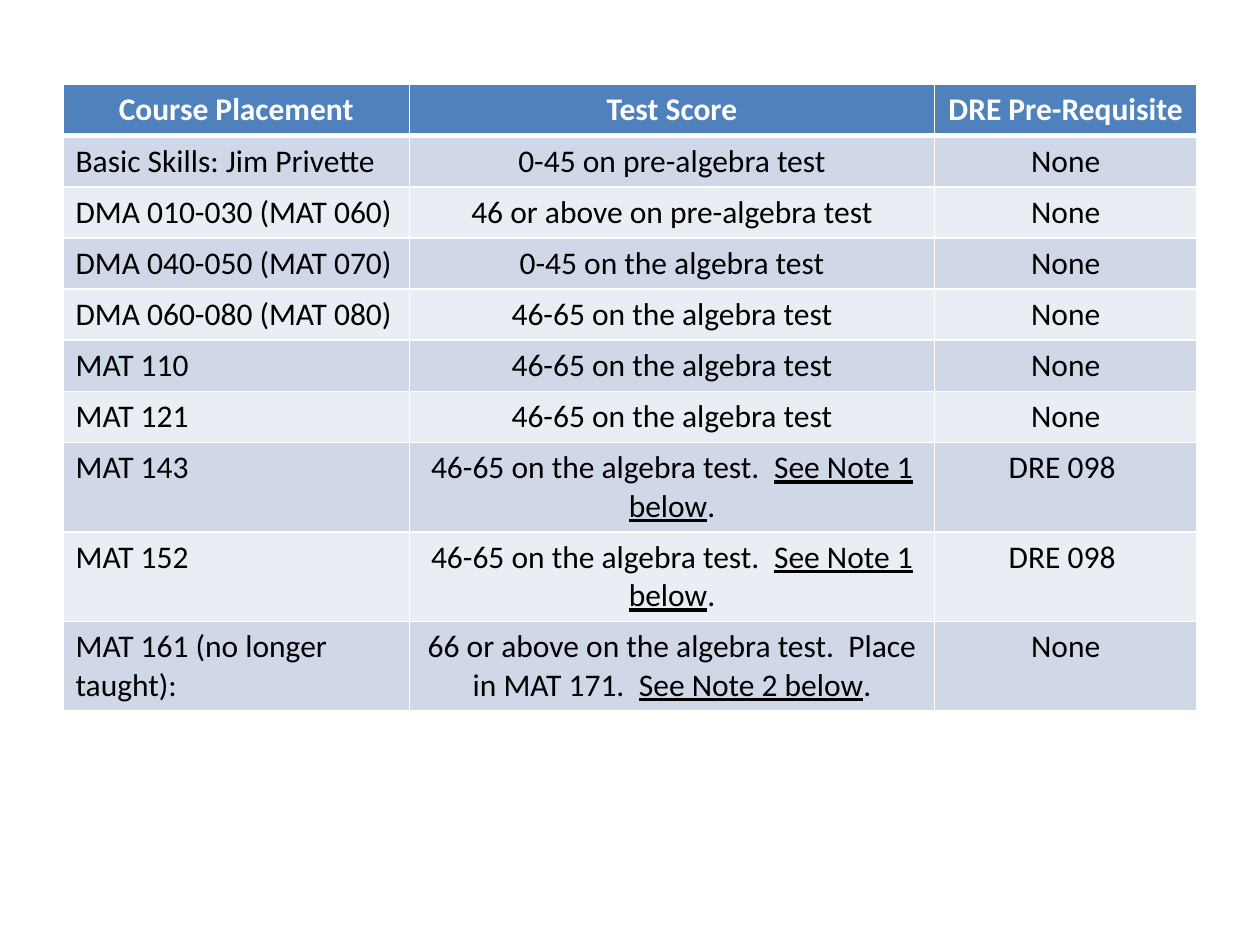
"""Build the math course placement table slide."""
from lxml.etree import SubElement
from pptx import Presentation
from pptx.dml.color import RGBColor
from pptx.enum.text import PP_ALIGN
from pptx.oxml.ns import qn
from pptx.util import Pt

WHITE = RGBColor(0xFF, 0xFF, 0xFF)
BLACK = RGBColor(0x00, 0x00, 0x00)
BLUE = RGBColor(0x4F, 0x81, 0xBD)
BAND_DARK = RGBColor(0xD0, 0xD8, 0xE8)
BAND_LIGHT = RGBColor(0xE9, 0xED, 0xF4)

MID_SCORE = "46-65 on the algebra test"
NOTE_1 = (MID_SCORE + ".  ", "See Note 1 below", ".")
NOTE_2 = ("66 or above on the algebra test.  Place in MAT 171.  ", "See Note 2 below", ".")
ROWS = [
    ("Course Placement", ("Test Score",), "DRE Pre-Requisite"),
    ("Basic Skills: Jim Privette", ("0-45 on pre-algebra test",), "None"),
    ("DMA 010-030 (MAT 060)", ("46 or above on pre-algebra test",), "None"),
    ("DMA 040-050 (MAT 070)", ("0-45 on the algebra test",), "None"),
    ("DMA 060-080 (MAT 080)", (MID_SCORE,), "None"),
    ("MAT 110", (MID_SCORE,), "None"),
    ("MAT 121", (MID_SCORE,), "None"),
    ("MAT 143", NOTE_1, "DRE 098 "),
    ("MAT 152", NOTE_1, "DRE 098 "),
    ("MAT 161 (no longer taught):", NOTE_2, "None"),
]
COL_WIDTHS = (198, 300, 150)
ROW_HEIGHT = 29.2


def set_borders(cell, top, bottom):
    tcPr = cell._tc.get_or_add_tcPr()
    for i, (side, width) in enumerate((("L", 1), ("R", 1), ("T", top), ("B", bottom))):
        ln = tcPr.makeelement(qn(f"a:ln{side}"), {"w": str(Pt(width))})
        SubElement(SubElement(ln, qn("a:solidFill")), qn("a:srgbClr"), val=str(WHITE))
        tcPr.insert(i, ln)


prs = Presentation()
prs.slide_width, prs.slide_height = Pt(720), Pt(540)
s = prs.slides.add_slide(prs.slide_layouts[6])
table = s.shapes.add_table(len(ROWS), len(COL_WIDTHS), Pt(36), Pt(48.4),
                           Pt(sum(COL_WIDTHS)), Pt(ROW_HEIGHT * len(ROWS))).table
for col, width in zip(table.columns, COL_WIDTHS):
    col.width = Pt(width)

for i, (course, score, prerequisite) in enumerate(ROWS):
    table.rows[i].height = Pt(ROW_HEIGHT)
    header = i == 0
    fill = BLUE if header else BAND_DARK if i % 2 else BAND_LIGHT
    for j, texts in enumerate(((course,), score, (prerequisite,))):
        cell = table.cell(i, j)
        cell.fill.solid()
        cell.fill.fore_color.rgb = fill
        set_borders(cell, top=3 if i == 1 else 1, bottom=3 if header else 1)
        p = cell.text_frame.paragraphs[0]
        p.alignment = PP_ALIGN.CENTER if header or j else PP_ALIGN.LEFT
        for k, text in enumerate(texts):
            r = p.add_run()
            r.text = text
            r.font.name, r.font.size = "Calibri", Pt(18)
            r.font.bold = header
            r.font.underline = k == 1
            r.font.color.rgb = WHITE if header else BLACK

prs.save("out.pptx")
